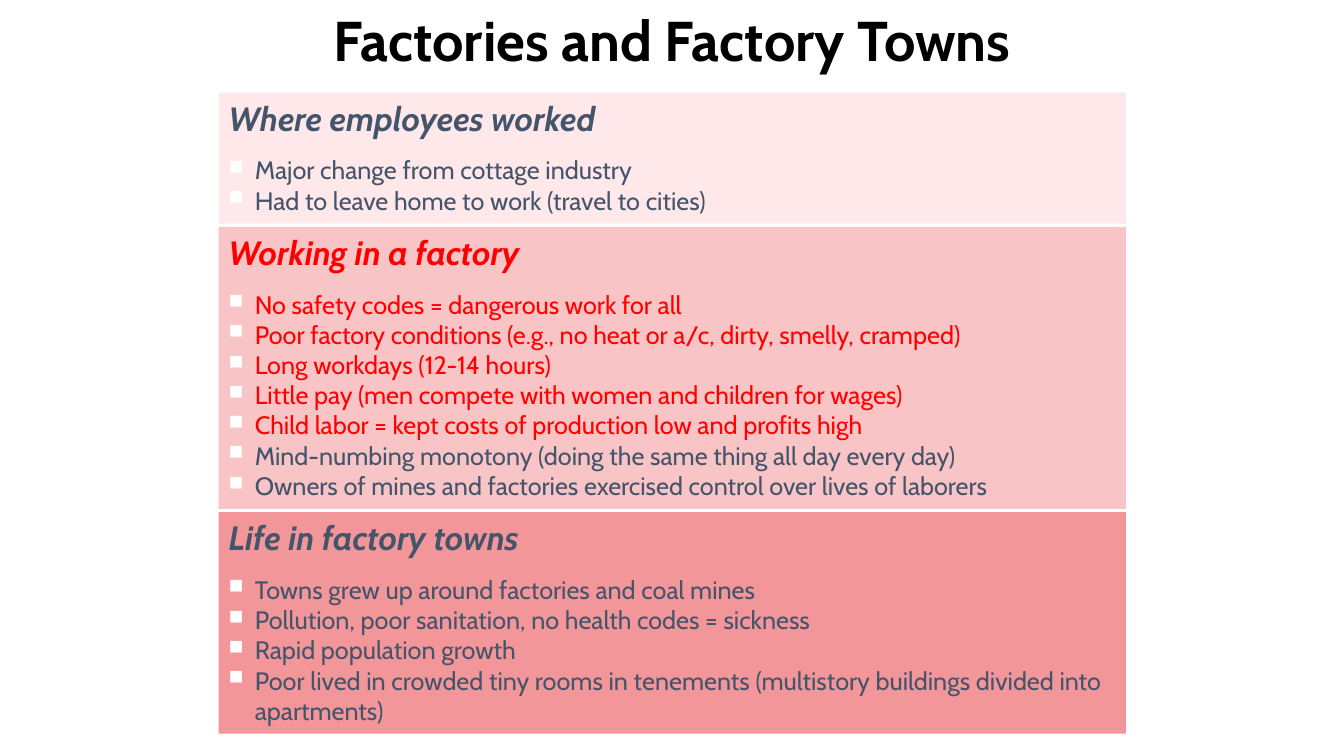
from dataclasses import dataclass

from lxml.etree import SubElement
from pptx import Presentation
from pptx.dml.color import RGBColor
from pptx.enum.shapes import MSO_SHAPE
from pptx.enum.text import MSO_ANCHOR, PP_ALIGN
from pptx.oxml.ns import qn
from pptx.util import Pt


@dataclass(frozen=True)
class Theme:
    """Colours, font and type sizes of the slide."""
    font: str = "Cabin"
    title_size: int = 40
    heading_size: int = 24
    body_size: int = 18
    black: str = "000000"
    slate: str = "44546A"
    red: str = "FF0000"
    bullet: str = "FFFFFF"
    pale: str = "FEE8EA"
    medium: str = "F8C4C5"
    deep: str = "F29699"


THEME = Theme()
TITLE_BOX = (168, 0, 624, 66.24)
SECTIONS_BOX = (156.24, 66.24, 648)
SECTION_GAP = 2.16
HANGING_INDENT = 18.72

SECTIONS = [
    (93.6, THEME.pale, ("Where employees worked", THEME.slate), [
        ("Major change from cottage industry", THEME.slate),
        ("Had to leave home to work (travel to cities)", THEME.slate),
    ]),
    (201.6, THEME.medium, ("Working in a factory", THEME.red), [
        ("No safety codes = dangerous work for all", THEME.red),
        ("Poor factory conditions (e.g., no heat or a/c, dirty, smelly, cramped)", THEME.red),
        ("Long workdays (12-14 hours)", THEME.red),
        ("Little pay (men compete with women and children for wages)", THEME.red),
        ("Child labor = kept costs of production low and profits high", THEME.red),
        ("Mind-numbing monotony (doing the same thing all day every day)", THEME.slate),
        ("Owners of mines and factories exercised control over lives of laborers", THEME.slate),
    ]),
    (158.4, THEME.deep, ("Life in factory towns", THEME.slate), [
        ("Towns grew up around factories and coal mines", THEME.slate),
        ("Pollution, poor sanitation, no health codes = sickness", THEME.slate),
        ("Rapid population growth", THEME.slate),
        ("Poor lived in crowded tiny rooms in tenements "
         "(multistory buildings divided into apartments)", THEME.slate),
    ]),
]


def write_text(paragraph, text, *, size, color, bold=False, italic=False,
               align=PP_ALIGN.LEFT, before=0):
    """Write one formatted run into a paragraph."""
    paragraph.alignment = align
    paragraph.space_before = Pt(before)
    run = paragraph.add_run()
    run.text = text
    font = run.font
    font.name, font.size = THEME.font, Pt(size)
    font.bold, font.italic = bold, italic
    font.color.rgb = RGBColor.from_string(color)


def hang_paragraph(paragraph, bulleted):
    """Give a paragraph its hanging indent and, if wanted, a square bullet."""
    properties = paragraph._p.get_or_add_pPr()
    properties.set("marL", str(Pt(HANGING_INDENT)))
    properties.set("indent", str(-Pt(HANGING_INDENT)))
    if bulleted:
        color = SubElement(properties, qn("a:buClr"))
        SubElement(color, qn("a:srgbClr"), val=THEME.bullet)
        SubElement(properties, qn("a:buSzPct"), val="80000")
        SubElement(properties, qn("a:buChar"), char="■")


def prepare_frame(shape):
    """Set wrapping, top anchoring and margins, and return the text frame."""
    frame = shape.text_frame
    frame.word_wrap = True
    frame.vertical_anchor = MSO_ANCHOR.TOP
    frame.margin_left = frame.margin_right = Pt(7.2)
    frame.margin_top = frame.margin_bottom = Pt(3.6)
    return frame


def place_title(slide, box):
    """Place the slide title in the given box."""
    title = slide.shapes.title
    title.left, title.top, title.width, title.height = map(Pt, box)
    write_text(prepare_frame(title).paragraphs[0], "Factories and Factory Towns",
               size=THEME.title_size, color=THEME.black, bold=True,
               align=PP_ALIGN.CENTER)


def add_section(slide, box, fill, heading, points):
    """Add a filled panel with a heading and its bulleted points."""
    panel = slide.shapes.add_shape(MSO_SHAPE.RECTANGLE, *map(Pt, box))
    panel.shadow.inherit = False
    panel.fill.solid()
    panel.fill.fore_color.rgb = RGBColor.from_string(fill)
    panel.line.fill.background()
    frame = prepare_frame(panel)
    text, color = heading
    write_text(frame.paragraphs[0], text, size=THEME.heading_size, color=color,
               bold=True, italic=True)
    hang_paragraph(frame.paragraphs[0], bulleted=False)
    for index, (text, color) in enumerate(points):
        paragraph = frame.add_paragraph()
        write_text(paragraph, text, size=THEME.body_size, color=color,
                   before=0 if index else 12)
        hang_paragraph(paragraph, bulleted=True)


def add_sections(slide, box):
    """Stack the panels downward from the top of the given box."""
    left, top, width = box
    for height, fill, heading, points in SECTIONS:
        add_section(slide, (left, top, width, height), fill, heading, points)
        top += height + SECTION_GAP


def main():
    """Build and save the presentation."""
    presentation = Presentation()
    presentation.slide_width, presentation.slide_height = Pt(960), Pt(540)
    slide = presentation.slides.add_slide(presentation.slide_layouts[5])
    place_title(slide, TITLE_BOX)
    add_sections(slide, SECTIONS_BOX)
    presentation.save("out.pptx")


if __name__ == "__main__":
    main()
